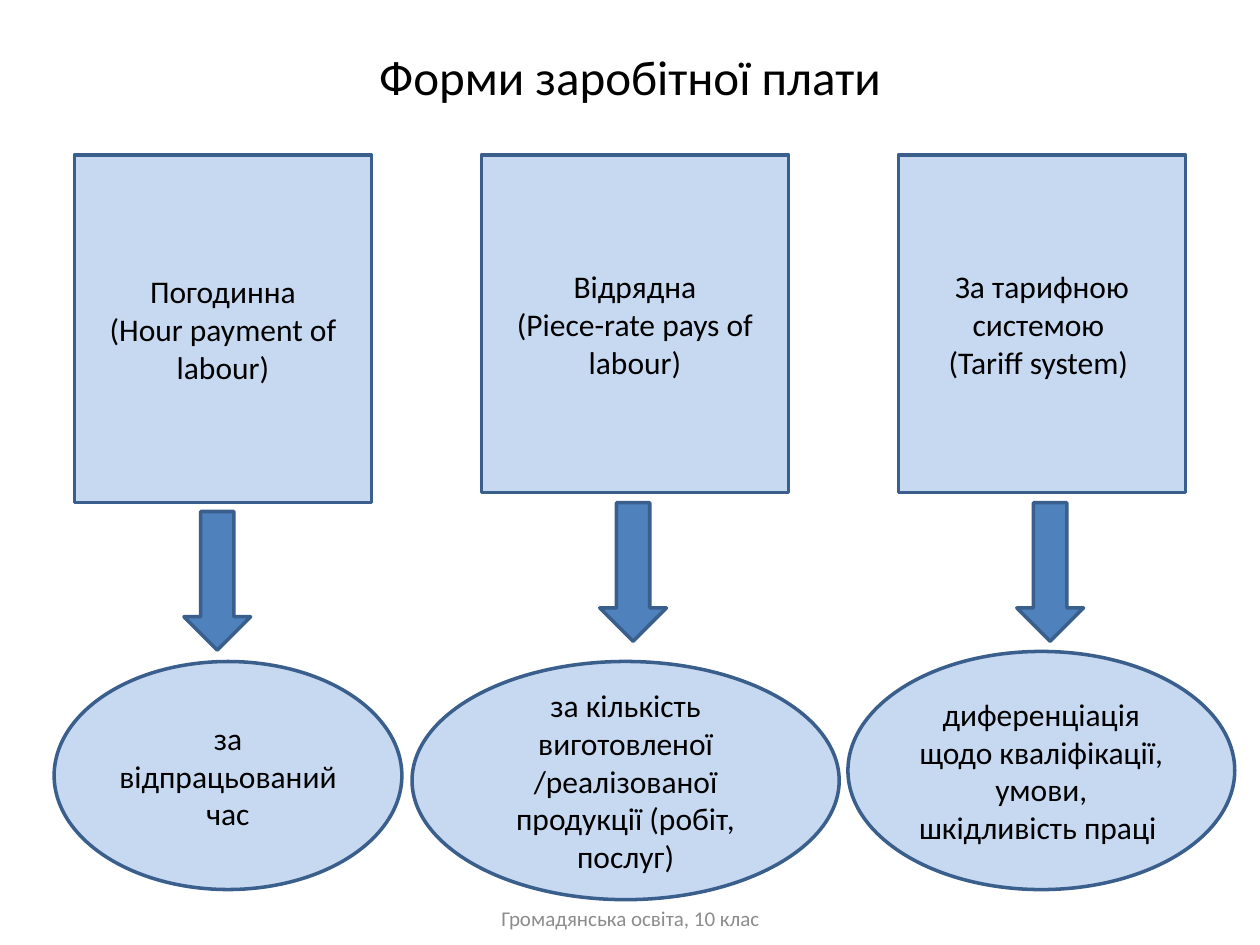
from pptx import Presentation
from pptx.dml.color import RGBColor
from pptx.enum.shapes import MSO_SHAPE as SHAPE
from pptx.enum.text import MSO_ANCHOR, PP_ALIGN
from pptx.util import Inches, Pt

# Content: one entry per form of payment, boxes as (left, top, width, height)
TITLE = ("Форми заробітної плати", (0.5, 0.3, 9, 0.61))
# The footer sits just below the lowest oval
FOOTER = ("Громадянська освіта, 10 клас", (3.42, 7.09, 3.17, 0.4))
FORMS = [
    {"form": ["Погодинна", "(Hour payment of labour)"],
     "form_box": (0.59, 1.23, 2.36, 2.76),
     "arrow_at": (1.46, 4.06),
     "basis": ["за відпрацьований час"],
     "basis_box": (0.43, 5.25, 2.76, 1.81)},
    {"form": ["Відрядна", "(Piece-rate pays of labour)"],
     "form_box": (3.82, 1.23, 2.44, 2.68),
     "arrow_at": (4.76, 3.99),
     "basis": ["за кількість",
               "виготовленої /реалізованої продукції (робіт, послуг)"],
     "basis_box": (3.27, 5.25, 3.39, 1.89)},
    {"form": ["За тарифною системою ", "(Tariff system) "],
     "form_box": (7.13, 1.23, 2.28, 2.68),
     "arrow_at": (8.07, 3.99),
     "basis": ["диференціація щодо кваліфікації, умови, шкідливість праці "],
     "basis_box": (6.73, 5.17, 3.07, 1.89)},
]
ARROW_SIZE = (0.53, 1.1)

THEME = {
    "panel": RGBColor.from_string("C6D9F1"),
    "arrow": RGBColor.from_string("4F81BD"),
    "line": RGBColor.from_string("3A5F8C"),
    "line_width": Pt(2),
    "title": {"name": "Calibri", "size": Pt(28), "color": "000000"},
    "body": {"name": "Calibri", "size": Pt(18), "color": "000000"},
    "footer": {"name": "Calibri", "size": Pt(12), "color": "8C8C8C"},
}


def write(sp, lines, style):
    """Fill a shape with centred paragraphs in one theme style."""
    tf = sp.text_frame
    tf.word_wrap = True
    tf.vertical_anchor = MSO_ANCHOR.MIDDLE
    for i, line in enumerate(lines):
        p = tf.paragraphs[0] if i == 0 else tf.add_paragraph()
        p.alignment = PP_ALIGN.CENTER
        r = p.add_run()
        r.text = line
        for key, value in THEME[style].items():
            if key == "color":
                r.font.color.rgb = RGBColor.from_string(value)
            else:
                setattr(r.font, key, value)


def add_label(s, text, box, style):
    write(s.shapes.add_textbox(*map(Inches, box)), [text], style)


def add_figure(s, kind, box, fill, lines=()):
    sp = s.shapes.add_shape(kind, *map(Inches, box))
    sp.shadow.inherit = False
    sp.fill.solid()
    sp.fill.fore_color.rgb = THEME[fill]
    sp.line.color.rgb = THEME["line"]
    sp.line.width = THEME["line_width"]
    write(sp, lines, "body")


def main():
    prs = Presentation()
    prs.slide_width, prs.slide_height = Inches(10), Inches(7.5)
    s = prs.slides.add_slide(prs.slide_layouts[6])

    add_label(s, *TITLE, "title")
    # Each column: form of payment, arrow, basis of payment
    for col in FORMS:
        add_figure(s, SHAPE.RECTANGLE, col["form_box"], "panel", col["form"])
        add_figure(s, SHAPE.DOWN_ARROW, col["arrow_at"] + ARROW_SIZE, "arrow")
        add_figure(s, SHAPE.OVAL, col["basis_box"], "panel", col["basis"])
    add_label(s, *FOOTER, "footer")

    prs.save("out.pptx")


if __name__ == "__main__":
    main()
